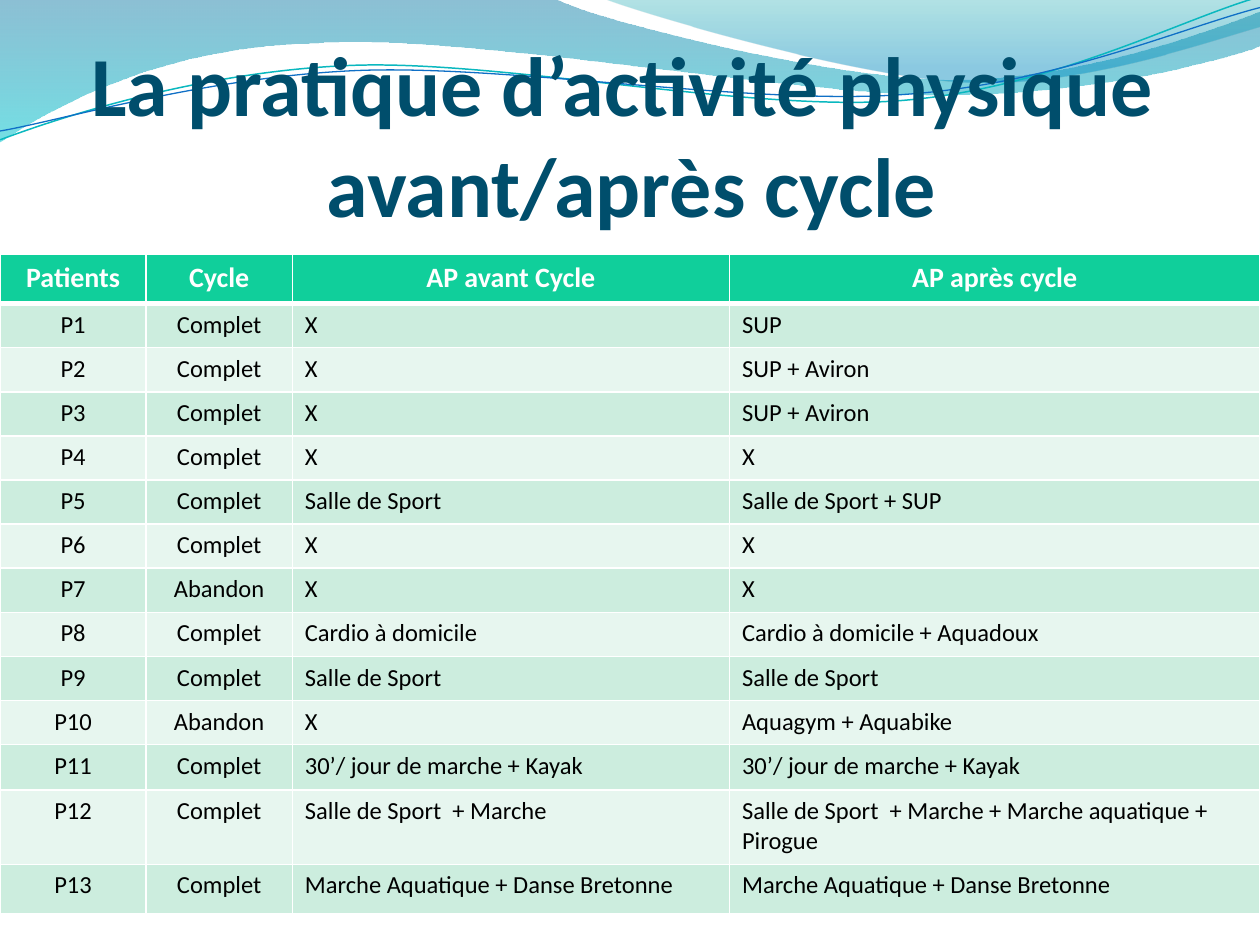
from math import cos, radians, sin

from lxml import etree
from pptx import Presentation
from pptx.dml.color import RGBColor
from pptx.enum.text import MSO_ANCHOR, MSO_AUTO_SIZE, PP_ALIGN
from pptx.oxml.ns import qn
from pptx.util import Inches, Pt

FONT = "Calibri"
WHITE = RGBColor(0xFF, 0xFF, 0xFF)
BLACK = RGBColor(0, 0, 0)
TITLE_BLUE = RGBColor(0x00, 0x4E, 0x6C)
HEADER_GREEN = RGBColor(0x10, 0xCF, 0x9B)
BAND_DARK = RGBColor(0xCC, 0xED, 0xDE)
BAND_LIGHT = RGBColor(0xE7, 0xF6, 0xEF)
DEEP_BLUE = RGBColor(0x00, 0x74, 0xA1)
CYAN = RGBColor(0x00, 0xC6, 0xCF)
TEAL = RGBColor(0x00, 0xA1, 0xA9)
SKY_BLUE = RGBColor(0x00, 0x8B, 0xBF)
LINE_TEAL = RGBColor(0x0A, 0xB8, 0xBF)
LINE_BLUE = RGBColor(0x0F, 0x6F, 0xC6)

# Outlines in inches: a pair is a straight step, six numbers are a Bézier curve
LEFT_WAVE = [
    (0, 0), (4.4, -0.01), (4.76, 0.17, 6.64, 0.63, 7.58, 0.63),
    (8.53, 0.63, 9.58, 0.26, 10, 0.09), (10.01, 0.36),
    (9.83, 0.44, 8.7, 0.76, 7.46, 0.75), (6.22, 0.75, 3.82, 0.28, 2.57, 0.34),
    (1.29, 0.36, 0.46, 0.83, -0.01, 1.13), (0, 0),
]
RIGHT_WAVE = [
    (4.79, -0.01), (5.09, 0.11, 6.82, 0.62, 7.69, 0.65),
    (8.56, 0.69, 9.61, 0.32, 10, 0.21), (10, 0), (4.79, -0.01),
]
TEAL_CURVE = [
    (0, 1.11), (0.48, 0.93, 1.58, 0.57, 2.77, 0.52),
    (3.95, 0.47, 5.93, 0.89, 7.13, 0.8), (8.33, 0.71, 9.38, 0.15, 9.98, -0.02),
]
BLUE_CURVE = [
    (0, 1.04), (0.47, 0.96, 1.64, 0.61, 2.83, 0.56),
    (4.03, 0.51, 5.97, 0.84, 7.17, 0.75), (8.36, 0.67, 9.41, 0.21, 10, 0.06),
]
CURVE_TILT = 357.3
CURVE_CENTER = (4.99, 0.58)

HEADERS = ["Patients", "Cycle", "AP avant Cycle", "AP après cycle"]
# Cycle, activity before, activity after
PATIENTS = [
    ("Complet", "X", "SUP"),
    ("Complet", "X", "SUP + Aviron"),
    ("Complet", "X", "SUP + Aviron"),
    ("Complet", "X", "X"),
    ("Complet", "Salle de Sport", "Salle de Sport + SUP"),
    ("Complet", "X", "X"),
    ("Abandon", "X", "X"),
    ("Complet", "Cardio à domicile", "Cardio à domicile + Aquadoux"),
    ("Complet", "Salle de Sport", "Salle de Sport"),
    ("Abandon", "X", "Aquagym + Aquabike"),
    ("Complet", "30’/ jour de marche + Kayak", "30’/ jour de marche + Kayak"),
    ("Complet", "Salle de Sport  + Marche",
     "Salle de Sport  + Marche + Marche aquatique + Pirogue"),
    ("Complet", "Marche Aquatique + Danse Bretonne",
     "Marche Aquatique + Danse Bretonne"),
]
COLUMN_WIDTHS = [1.16, 1.16, 3.47, 4.21]
ROW_HEIGHTS = [0.39] + [0.35] * 10 + [0.36, 0.59, 0.39]


def level(step):
    """Turn the points of a step back by the tilt that its shape will get."""
    angle = radians(360 - CURVE_TILT)
    center_x, center_y = CURVE_CENTER
    turned = []
    for x, y in zip(step[::2], step[1::2]):
        dx, dy = x - center_x, y - center_y
        turned += [center_x + dx * cos(angle) - dy * sin(angle),
                   center_y + dx * sin(angle) + dy * cos(angle)]
    return turned


def add_outline(slide, outline, close):
    """Add a freeform through the end points, then bend its curved steps."""
    steps = [[Inches(value) for value in step] for step in outline]
    builder = slide.shapes.build_freeform(*steps[0])
    builder.add_line_segments([step[-2:] for step in steps[1:]], close=close)
    shape = builder.convert_to_shape()
    shape.shadow.inherit = False
    segments = list(shape._element.spPr.iter(qn("a:lnTo")))
    for segment, step in zip(segments, steps[1:]):
        if len(step) == 2:
            continue
        curve = etree.Element(qn("a:cubicBezTo"))
        for x, y in zip(step[::2], step[1::2]):
            etree.SubElement(curve, qn("a:pt"),
                             x=str(x - shape.left), y=str(y - shape.top))
        segment.getparent().replace(segment, curve)
    return shape


def add_wave(slide, outline, stops):
    """Add a translucent wave; stops hold position, colour and opacity in percent."""
    shape = add_outline(slide, outline, close=True)
    shape.line.fill.background()
    shape.fill.gradient()
    shape.fill.gradient_angle = 270
    for stop, (position, color, _) in zip(shape.fill.gradient_stops, stops):
        stop.position = position
        stop.color.rgb = color
    colors = shape._element.spPr.iter(qn("a:srgbClr"))
    for element, (_, _, opacity) in zip(colors, stops):
        etree.SubElement(element, qn("a:alpha"), val=str(opacity * 1000))


def add_curve(slide, outline, color, width):
    shape = add_outline(slide, [level(step) for step in outline], close=False)
    shape.rotation = CURVE_TILT
    shape.fill.background()
    shape.line.color.rgb = color
    shape.line.width = Pt(width)


def write(paragraph, text, size, color, bold=False, align=PP_ALIGN.LEFT):
    paragraph.alignment = align
    run = paragraph.add_run()
    run.text = text
    run.font.name = FONT
    run.font.size = Pt(size)
    run.font.bold = bold
    run.font.color.rgb = color


def set_borders(cell, **widths):
    """Give the cell white borders; widths override 1 pt per side."""
    properties = cell._tc.get_or_add_tcPr()
    for side in ("L", "R", "T", "B"):
        width = Pt(widths.get(side, 1))
        line = etree.SubElement(properties, qn(f"a:ln{side}"), w=str(width))
        fill = etree.SubElement(line, qn("a:solidFill"))
        etree.SubElement(fill, qn("a:srgbClr"), val=str(WHITE))


def fill_cell(cell, text, fill, borders, **text_format):
    set_borders(cell, **borders)
    cell.fill.solid()
    cell.fill.fore_color.rgb = fill
    write(cell.text_frame.paragraphs[0], text, **text_format)


def add_activity_table(slide):
    rows = [HEADERS] + [(f"P{n}", *row) for n, row in enumerate(PATIENTS, 1)]
    table = slide.shapes.add_table(
        len(rows), len(HEADERS), Inches(0), Inches(2.02),
        Inches(sum(COLUMN_WIDTHS)), Inches(sum(ROW_HEIGHTS))).table
    for column, width in zip(table.columns, COLUMN_WIDTHS):
        column.width = Inches(width)
    for row, height in zip(table.rows, ROW_HEIGHTS):
        row.height = Inches(height)
    for r, texts in enumerate(rows):
        for c, text in enumerate(texts):
            cell = table.cell(r, c)
            if r == 0:
                fill_cell(cell, text, HEADER_GREEN, {"B": 3}, size=16,
                          color=WHITE, bold=True, align=PP_ALIGN.CENTER)
            else:
                fill_cell(cell, text, BAND_DARK if r % 2 else BAND_LIGHT,
                          {"T": 3} if r == 1 else {}, size=14, color=BLACK,
                          align=PP_ALIGN.CENTER if c < 2 else PP_ALIGN.LEFT)


def format_title(slide, lines):
    title = slide.shapes.title
    title.left, title.top = Inches(0.58), Inches(0.21)
    title.width, title.height = Inches(8.72), Inches(1.72)
    frame = title.text_frame
    frame.word_wrap = False
    frame.auto_size = MSO_AUTO_SIZE.SHAPE_TO_FIT_TEXT
    frame.vertical_anchor = MSO_ANCHOR.TOP
    for index, line in enumerate(lines):
        paragraph = frame.add_paragraph() if index else frame.paragraphs[0]
        write(paragraph, line, 48, TITLE_BLUE, bold=True, align=PP_ALIGN.CENTER)
    # Bring the title in front of the waves
    slide.shapes._spTree.append(title._element)


def main():
    presentation = Presentation()
    presentation.slide_width, presentation.slide_height = Inches(10), Inches(7.5)
    slide = presentation.slides.add_slide(presentation.slide_layouts[5])
    # Wave decoration
    add_wave(slide, LEFT_WAVE, [(0, DEEP_BLUE, 45), (1, CYAN, 55)])
    add_wave(slide, RIGHT_WAVE, [(0, TEAL, 30), (0.8, SKY_BLUE, 45)])
    add_curve(slide, TEAL_CURVE, LINE_TEAL, 0.85)
    add_curve(slide, BLUE_CURVE, LINE_BLUE, 0.75)
    # Content
    add_activity_table(slide)
    format_title(slide, ["La pratique d’activité physique", " avant/après cycle"])
    presentation.save("out.pptx")


if __name__ == "__main__":
    main()
